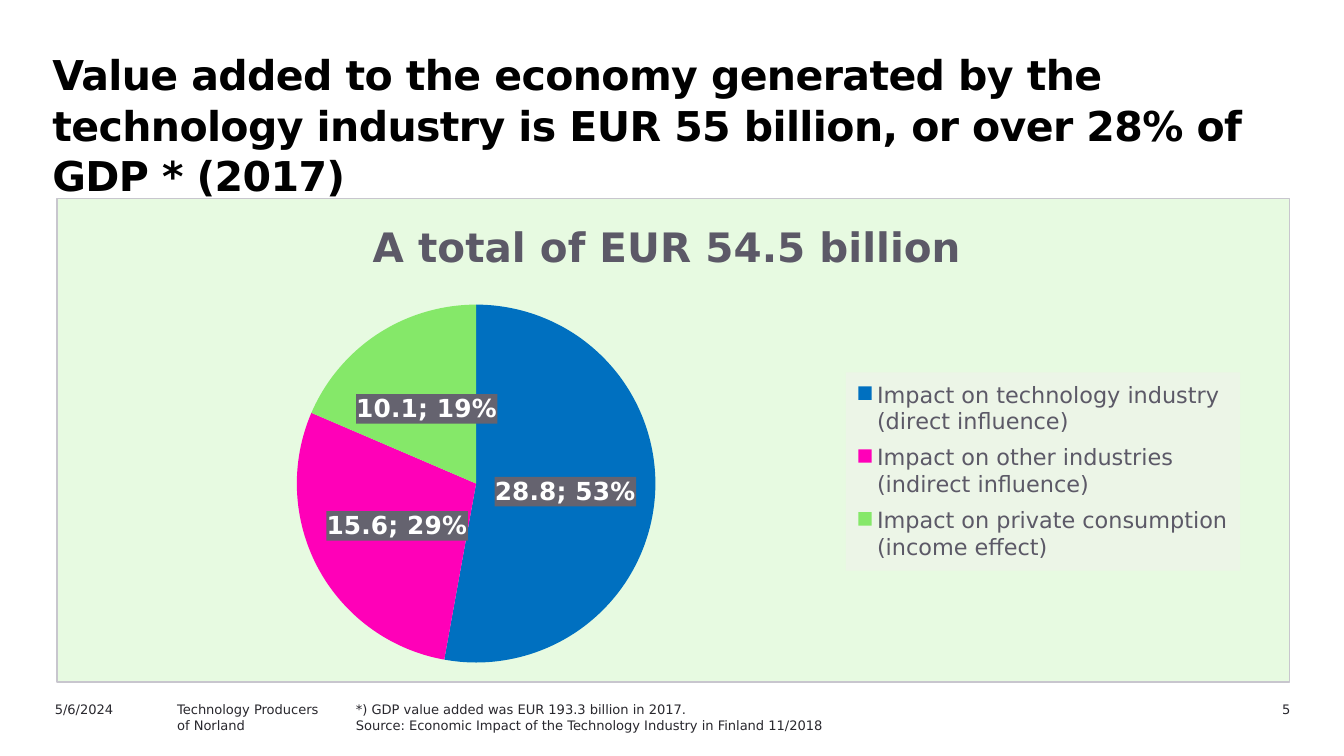
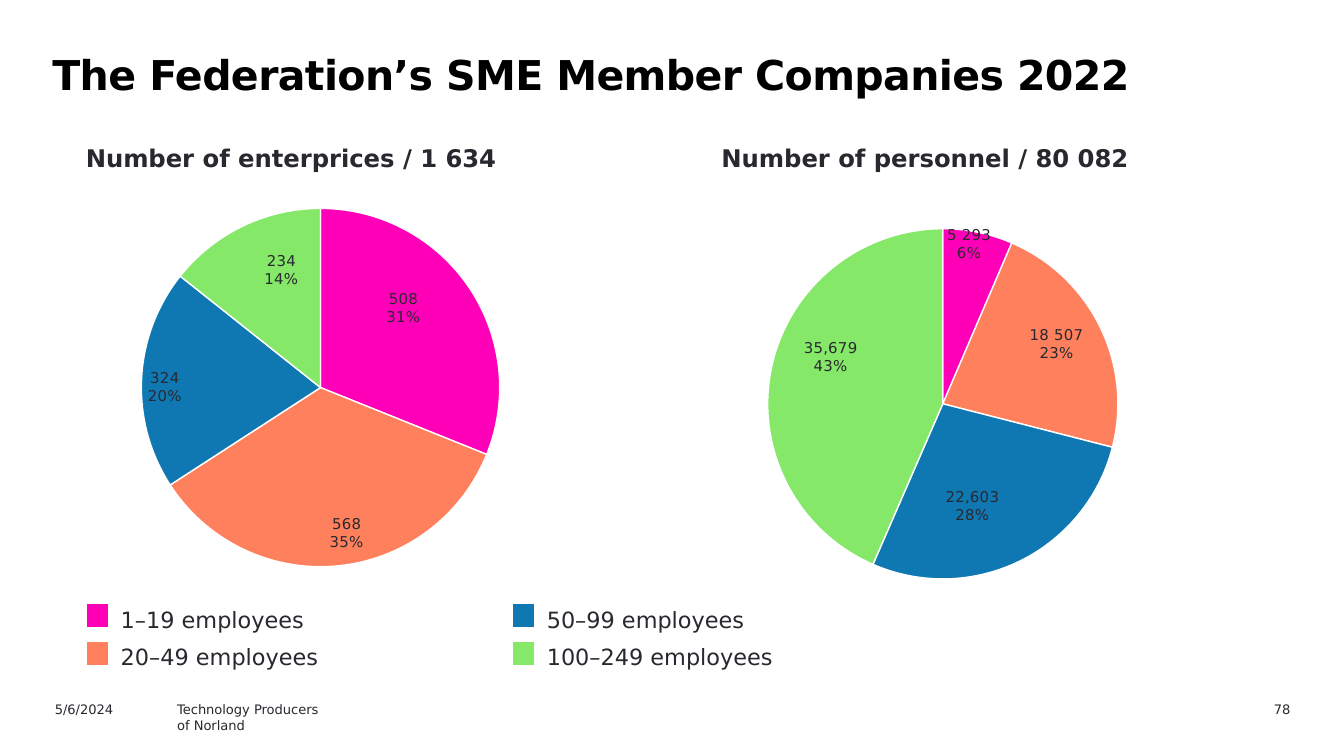
from pptx import Presentation
from pptx.chart.data import CategoryChartData
from pptx.dml.color import RGBColor
from pptx.enum.chart import XL_CHART_TYPE, XL_LABEL_POSITION, XL_LEGEND_POSITION
from pptx.enum.shapes import MSO_SHAPE
from pptx.enum.text import MSO_ANCHOR, MSO_AUTO_SIZE, PP_ALIGN
from pptx.oxml import parse_xml
from pptx.oxml.ns import nsdecls
from pptx.util import Inches, Pt

PIE = XL_CHART_TYPE.PIE
LABEL_CENTER = XL_LABEL_POSITION.CENTER
LEGEND_RIGHT = XL_LEGEND_POSITION.RIGHT
RECTANGLE = MSO_SHAPE.RECTANGLE
TOP = MSO_ANCHOR.TOP
NO_AUTOFIT = MSO_AUTO_SIZE.NONE
LEFT, RIGHT = PP_ALIGN.LEFT, PP_ALIGN.RIGHT

FONT = "DejaVu Sans"
BLACK = RGBColor(0x00, 0x00, 0x00)
WHITE = RGBColor(0xFF, 0xFF, 0xFF)
INK = RGBColor(0x29, 0x28, 0x2E)
GREY = RGBColor(0x5C, 0x59, 0x67)
LABEL_GREY = RGBColor(0x65, 0x63, 0x6F)
BORDER = RGBColor(0xC8, 0xC6, 0xCE)
MINT = RGBColor(0xE7, 0xFA, 0xE1)
LEGEND_FILL = RGBColor(0xEC, 0xF5, 0xE7)
BLUE = RGBColor(0x00, 0x70, 0xC0)
PINK = RGBColor(0xFF, 0x00, 0xB8)
GREEN = RGBColor(0x85, 0xE8, 0x69)
CORAL = RGBColor(0xFF, 0x80, 0x5C)
STEEL = RGBColor(0x0F, 0x78, 0xB2)

IMPACTS = [
    ("Impact on technology industry (direct influence)", 28.8, BLUE),
    ("Impact on other industries (indirect influence)", 15.6, PINK),
    ("Impact on private consumption (income effect)", 10.1, GREEN),
]
SIZE_CLASSES = [
    ("1–19 employees", PINK),
    ("20–49 employees", CORAL),
    ("50–99 employees", STEEL),
    ("100–249 employees", GREEN),
]
MEMBER_PIES = [
    {
        "heading": "Number of enterprices / 1 634",
        "heading_box": (0.54, 1.02, 3.56, 0.32),
        "chart_box": (0.68, 1.43, 3.28, 3.03),
        "plot": (0.11, 0.04, 0.82, 0.88),
        "values": [508, 568, 324, 234],
        "labels": ["508\n31%", "568\n35%", "324\n20%", "234\n14%"],
        "offsets": [(0.02, -0.07), (0.04, 0.14), (-0.15, 0.01), (0, -0.09)],
    },
    {
        "heading": "Number of personnel / 80 082",
        "heading_box": (5.27, 1.02, 3.84, 0.32),
        "chart_box": (5.31, 1.43, 3.28, 3.03),
        "plot": (0.12, 0.09, 0.8, 0.86),
        "values": [5293, 18507, 22603, 35679],
        "labels": ["5 293\n6%", "18 507\n23%", "22,603\n28%", "35,679\n43%"],
        "offsets": [(0.02, -0.18), (0.08, -0.05), (-0.02, 0.06), (-0.06, -0.07)],
    },
]


def style_font(font, size, color=INK, bold=False):
    settings = {"name": FONT, "size": Pt(size), "bold": bold}
    for attribute, value in settings.items():
        setattr(font, attribute, value)
    font.color.rgb = color


def add_text(slide, box, lines, size, bold=False, align=LEFT, wrap=True):
    label = slide.shapes.add_textbox(*map(Inches, box))
    frame = label.text_frame
    frame.word_wrap = wrap
    frame.text = "\n".join(lines)
    for paragraph in frame.paragraphs:
        paragraph.alignment = align
        style_font(paragraph.runs[0].font, size, bold=bold)


def add_title(slide, text, width, height):
    title = slide.shapes.title
    title.left, title.top, title.width, title.height = map(
        Inches, (0.28, 0.31, width, height))
    frame = title.text_frame
    settings = {
        "word_wrap": True, "auto_size": NO_AUTOFIT, "vertical_anchor": TOP,
        "margin_left": Inches(0.11), "margin_right": Inches(0.03),
        "margin_top": Inches(0.05), "margin_bottom": Inches(0.05),
    }
    for attribute, value in settings.items():
        setattr(frame, attribute, value)
    paragraph = frame.paragraphs[0]
    paragraph.alignment = LEFT
    paragraph.line_spacing = Pt(27)
    paragraph.space_before = Pt(0)
    run = paragraph.add_run()
    run.text = text
    style_font(run.font, 22, BLACK, True)
    run.font._element.set("spc", "-30")


def add_footer(slide, number):
    add_text(slide, (0.31, 5.17, 1, 0.18), ["5/6/2024"], 7)
    add_text(slide, (1.22, 5.17, 1.8, 0.18),
             ["Technology Producers", "of Norland"], 7)
    add_text(slide, (8.76, 5.17, 0.94, 0.18), [number], 7, align=RIGHT)


def set_layout(parent, index, x, y, size=None, edge=False, inner=False):
    for existing in parent.xpath("./c:layout"):
        parent.remove(existing)
    settings = []
    if inner:
        settings.append(("layoutTarget", "inner"))
    if edge:
        settings += [("xMode", "edge"), ("yMode", "edge")]
    settings += [("x", x), ("y", y)]
    if size:
        settings += zip("wh", size)
    content = "".join(f'<c:{tag} val="{value}"/>' for tag, value in settings)
    parent.insert(index, parse_xml(
        f'<c:layout {nsdecls("c")}><c:manualLayout>{content}'
        '</c:manualLayout></c:layout>'))


def set_background(parent, fill, border=None):
    line = "<a:ln><a:noFill/></a:ln>"
    if border:
        line = (f'<a:ln w="{Pt(0.75)}"><a:solidFill><a:srgbClr val="{border}"/>'
                '</a:solidFill></a:ln>')
    parent.xpath("./c:txPr")[0].addprevious(parse_xml(
        f'<c:spPr {nsdecls("c", "a")}><a:solidFill><a:srgbClr val="{fill}"/>'
        f'</a:solidFill>{line}</c:spPr>'))


def add_pie(slide, box, categories, values, colors, plot_box, font_size,
            number_format="General", outline=None):
    data = CategoryChartData(number_format=number_format)
    data.categories = categories
    data.add_series("Series 1", values)
    chart = slide.shapes.add_chart(PIE, *map(Inches, box), data).chart
    style_font(chart.font, font_size)
    chart.has_title = False
    chart.has_legend = False
    chart.plots[0].vary_by_categories = True
    x, y, *size = plot_box
    set_layout(chart.element.xpath(".//c:plotArea")[0], 0, x, y, size,
               edge=True, inner=True)
    series = chart.plots[0].series[0]
    for index, color in enumerate(colors):
        wedge = series.points[index].format
        wedge.fill.solid()
        wedge.fill.fore_color.rgb = color
        if outline:
            wedge.line.color.rgb = outline
            wedge.line.width = Pt(0.75)
        else:
            wedge.line.fill.background()
    labels = series.data_labels
    labels.show_value = True
    labels.show_percentage = True
    labels.position = LABEL_CENTER
    return chart


def add_impact_chart(slide):
    names, values, colors = zip(*IMPACTS)
    chart = add_pie(slide, (0.42, 1.47, 9.18, 3.61), names, values, colors,
                    (0.19, 0.22, 0.3, 0.74), 10)
    set_background(chart.element, MINT, BORDER)

    chart.has_title = True
    heading = chart.chart_title.text_frame
    heading.text = "A total of EUR 54.5 billion"
    style_font(heading.paragraphs[0].runs[0].font, 21.7, GREY, True)
    set_layout(chart.chart_title.element, 1, 0.25, 0.03, edge=True)

    chart.has_legend = True
    chart.legend.position = LEGEND_RIGHT
    chart.legend.include_in_layout = False
    style_font(chart.legend.font, 12, GREY)
    legend = chart.element.xpath(".//c:legend")[0]
    set_layout(legend, 1, 0.64, 0.36, (0.32, 0.41), edge=True)
    set_background(legend, LEGEND_FILL)

    style_font(chart.plots[0].series[0].data_labels.font, 13.3, WHITE, True)
    labels = chart.element.xpath(".//c:ser/c:dLbls")[0]
    set_background(labels, LABEL_GREY)
    labels.xpath("./c:showBubbleSize")[0].addnext(parse_xml(
        f'<c:separator {nsdecls("c")}>; </c:separator>'))


def add_member_pie(slide, pie):
    add_text(slide, pie["heading_box"], [pie["heading"]], 13, bold=True)
    colors = [color for _, color in SIZE_CLASSES]
    chart = add_pie(slide, pie["chart_box"], ["1", "2", "3", "4"], pie["values"],
                    colors, pie["plot"], 18, "#,##0", WHITE)
    series = chart.plots[0].series[0]
    style_font(series.data_labels.font, 8)
    for index, text in enumerate(pie["labels"]):
        label = series.points[index].data_label
        label.text_frame.text = text
        for paragraph in label.text_frame.paragraphs:
            style_font(paragraph.runs[0].font, 8)
        label.position = LABEL_CENTER
    for element, offset in zip(chart.element.xpath(".//c:dLbl"), pie["offsets"]):
        set_layout(element, 1, *offset)


def add_size_legend(slide):
    for index, (name, color) in enumerate(SIZE_CLASSES):
        column, row = divmod(index, 2)
        left, top = 0.64 + 3.17 * column, 4.46 + 0.28 * row
        key = slide.shapes.add_shape(
            RECTANGLE, *map(Inches, (left, top + 0.03, 0.17, 0.18)))
        key.shadow.inherit = False
        key.fill.solid()
        key.fill.fore_color.rgb = color
        key.line.color.rgb = WHITE
        key.line.width = Pt(0.75)
        add_text(slide, (left + 0.16, top, 1.98, 0.3), [name], 12, wrap=False)


def build_value_slide(slide):
    add_title(slide, "Value added to the economy generated by the technology "
              "industry is EUR 55 billion, or over 28% of GDP * (2017)", 9.06, 0.71)
    add_impact_chart(slide)
    add_text(slide, (2.55, 5.17, 4.88, 0.18), [
        "*) GDP value added was EUR 193.3 billion in 2017.",
        "Source: Economic Impact of the Technology Industry in Finland 11/2018",
    ], 7)
    add_footer(slide, "5")


def build_member_slide(slide):
    add_title(slide, "The Federation’s SME Member Companies 2022", 8.74, 0.48)
    for pie in MEMBER_PIES:
        add_member_pie(slide, pie)
    add_size_legend(slide)
    add_footer(slide, "78")


def main():
    deck = Presentation()
    deck.slide_width = Inches(10)
    deck.slide_height = deck.slide_width * 9 // 16
    title_only = deck.slide_layouts[5]
    for build in (build_value_slide, build_member_slide):
        build(deck.slides.add_slide(title_only))
    deck.save("out.pptx")


if __name__ == "__main__":
    main()
